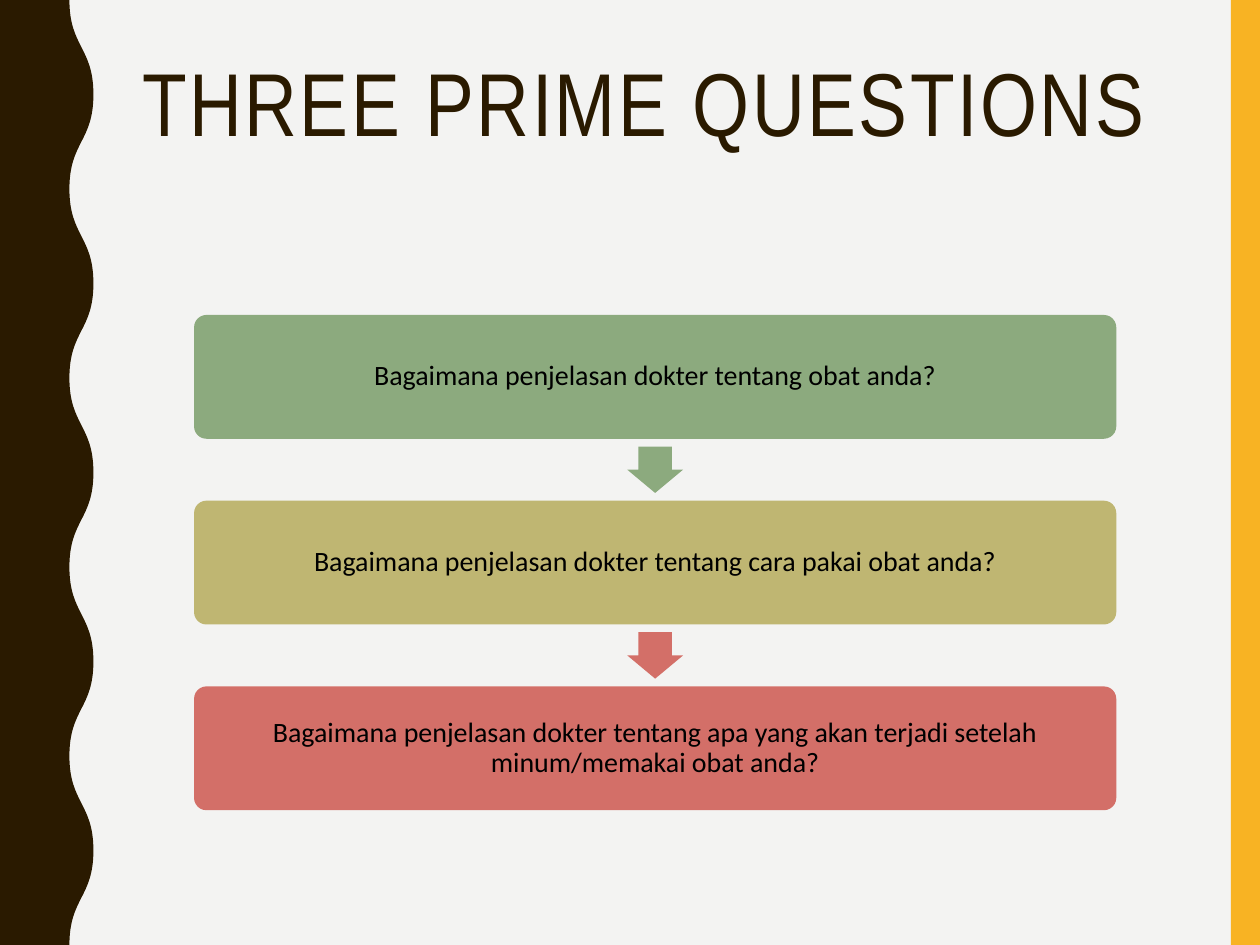
from lxml import etree
from pptx import Presentation
from pptx.dml.color import RGBColor
from pptx.enum import shapes, text
from pptx.oxml.ns import qn
from pptx.util import Pt

DARK, GOLD, PAPER = "2A1A00", "F8B323", "F3F3F2"
QUESTIONS = [
    ("Bagaimana penjelasan dokter tentang obat anda?", "8CAA7E"),
    ("Bagaimana penjelasan dokter tentang cara pakai obat anda?", "BFB672"),
    ("Bagaimana penjelasan dokter tentang apa yang akan terjadi setelah "
     "minum/memakai obat anda?", "D36F68"),
]
ARROW_COLORS = ["8CAA7E", "D36F68"]


def rgb(color):
    return RGBColor.from_string(color)


def paint(sp, color):
    sp.fill.solid()
    sp.fill.fore_color.rgb = rgb(color)
    sp.line.fill.background()
    sp.shadow.inherit = False


def add_shape(s, kind, x, y, w, h, color, adjustments=()):
    sp = s.shapes.add_shape(kind, Pt(x), Pt(y), Pt(w), Pt(h))
    for i, value in enumerate(adjustments):
        sp.adjustments[i] = value
    paint(sp, color)
    return sp


def set_font(p, name, size, color):
    p.line_spacing = 0.9
    p.font.name = name
    p.font.size = Pt(size)
    p.font.color.rgb = rgb(color)


def bend(line, start, end):
    (x1, y1), (x2, y2) = start, end
    middle = (y1 + y2) / 2
    curve = etree.Element(qn("a:cubicBezTo"))
    for px, py in ((x1, middle), (x2, middle), end):
        etree.SubElement(curve, qn("a:pt"), x=str(round(px)), y=str(round(py)))
    line.getparent().replace(line, curve)


def add_wave(s, x, y, w, h, depth=13.7, waves=5):
    unit = 100
    half = h / (2 * waves)
    edge = [((w - depth * (1 - i % 2)) * unit, i * half * unit)
            for i in range(2 * waves + 1)]
    fb = s.shapes.build_freeform(*edge[0], scale=Pt(1) / unit)
    fb.add_line_segments(edge[1:] + [(0, h * unit), (0, 0)], close=True)
    sp = fb.convert_to_shape(Pt(x), Pt(y))
    lines = list(sp._element.iter(qn("a:lnTo")))
    for line, start, end in zip(lines, edge, edge[1:]):
        bend(line, start, end)
    paint(sp, DARK)


def add_title(s, x, y, w, h):
    sp = s.shapes.title
    sp.left, sp.top, sp.width, sp.height = Pt(x), Pt(y), Pt(w), Pt(h)
    tf = sp.text_frame
    tf.text = "THREE PRIME QUESTIONS"
    tf.vertical_anchor = text.MSO_ANCHOR.TOP
    tf.auto_size = text.MSO_AUTO_SIZE.NONE
    p = tf.paragraphs[0]
    p.alignment = text.PP_ALIGN.LEFT
    set_font(p, "Arial Narrow", 51, DARK)
    p.runs[0].font._element.set("spc", "150")


def add_questions(s, x, y, w, h):
    count = len(QUESTIONS)
    box_h = h / (count + (count - 1) / 2)
    gap = box_h / 2
    arrow_w, arrow_h = 0.45 * box_h, 0.75 * gap
    for i, (question, color) in enumerate(QUESTIONS):
        top = y + i * (box_h + gap)
        sp = add_shape(s, shapes.MSO_SHAPE.ROUNDED_RECTANGLE,
                       x, top, w, box_h, color, [0.1])
        tf = sp.text_frame
        tf.word_wrap = True
        tf.vertical_anchor = text.MSO_ANCHOR.MIDDLE
        tf.margin_left = tf.margin_right = tf.margin_top = tf.margin_bottom = Pt(5)
        tf.text = question
        p = tf.paragraphs[0]
        p.alignment = text.PP_ALIGN.CENTER
        set_font(p, "Calibri", 16, "000000")
        if i < len(ARROW_COLORS):
            add_shape(s, shapes.MSO_SHAPE.DOWN_ARROW, x + (w - arrow_w) / 2,
                      top + box_h + (gap - arrow_h) / 2,
                      arrow_w, arrow_h, ARROW_COLORS[i], [0.6, 0.5])


def main():
    prs = Presentation()
    prs.slide_width, prs.slide_height = Pt(720), Pt(540)
    s = prs.slides.add_slide(prs.slide_layouts[5])
    s.background.fill.solid()
    s.background.fill.fore_color.rgb = rgb(PAPER)
    add_shape(s, shapes.MSO_SHAPE.RECTANGLE, 703.3, 0, 16.7, 540, GOLD)
    add_wave(s, 0, 0, 53.4, 540)
    add_title(s, 74, 30.5, 601, 117.5)
    add_questions(s, 110.9, 180, 527, 283)
    prs.save("out.pptx")


if __name__ == "__main__":
    main()
